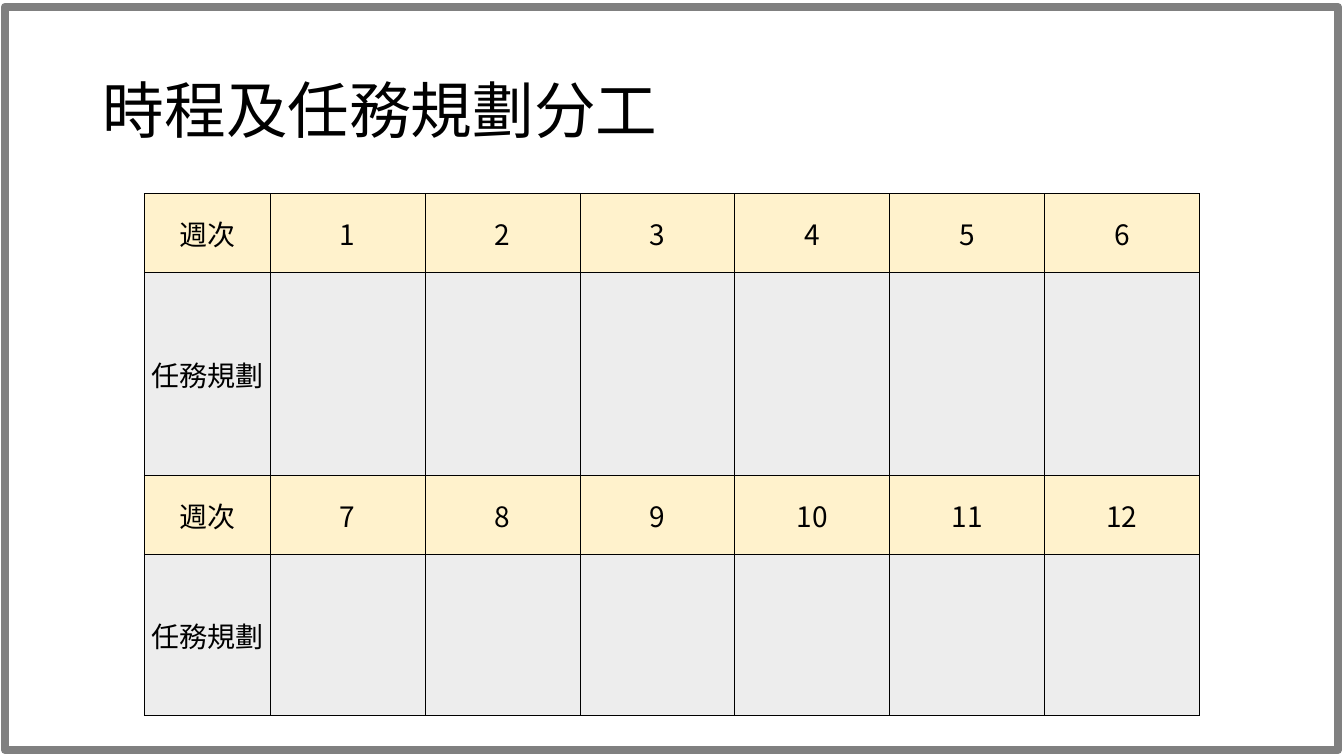
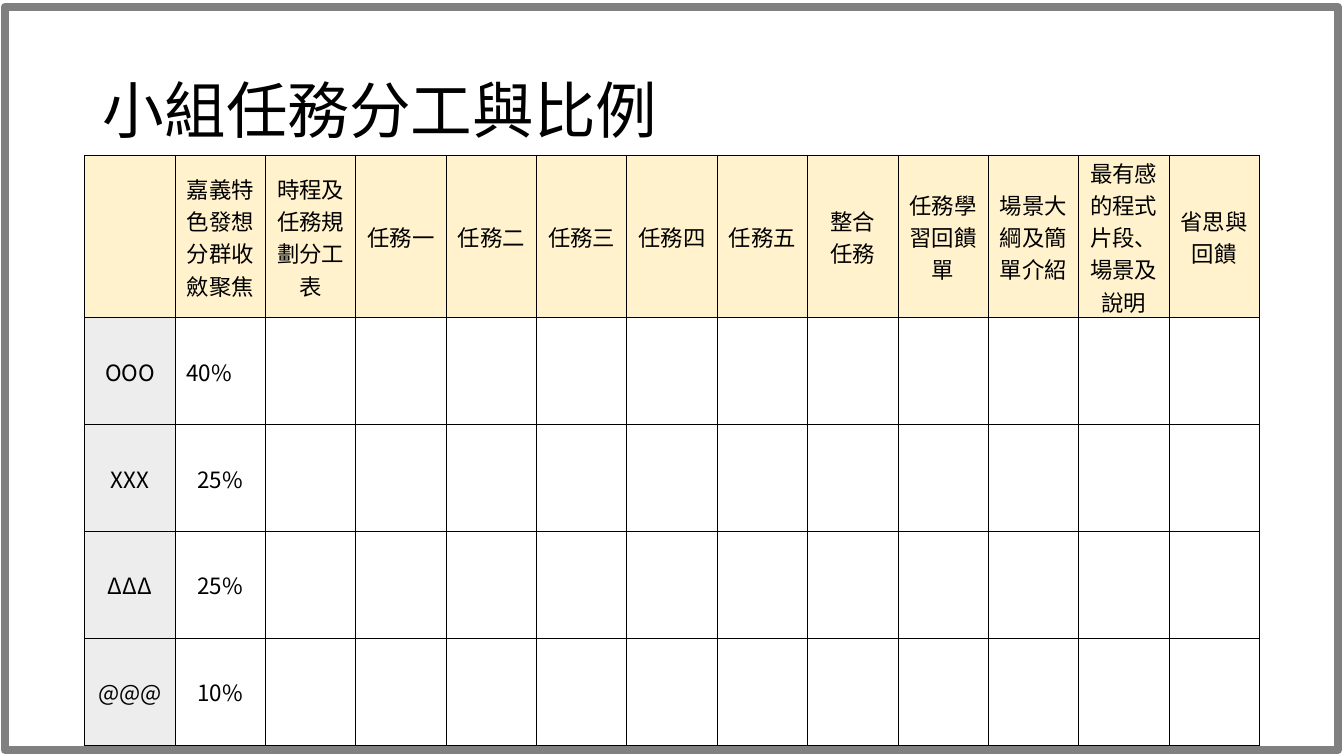
from lxml.etree import SubElement
from pptx import Presentation
from pptx.dml.color import RGBColor
from pptx.enum.shapes import MSO_SHAPE as Shape
from pptx.enum.text import MSO_ANCHOR as Anchor, MSO_AUTO_SIZE as AutoSize, PP_ALIGN as Align
from pptx.oxml.ns import qn
from pptx.util import Inches, Pt

FONT = "Noto Sans CJK SC"
BLACK, WHITE, FRAME_GRAY = "000000", "FFFFFF", "808080"
HEADER_FILL, LABEL_FILL = "FFF2CC", "EDEDED"
BORDER_WIDTH = Pt(0.5)
TITLE_BOX = (0.92, 0.4, 11.5, 1.45)
FRAME_BOX = (0.05, 0.07, 13.22, 7.37)


def color(value):
    return RGBColor.from_string(value)


def inches(box):
    return [Inches(length) for length in box]


def add_run(paragraph, text, size):
    run = paragraph.add_run()
    run.text = text
    run.font.name = FONT
    run.font.size = Pt(size)
    run.font.color.rgb = color(BLACK)
    # East Asian characters take their own typeface setting
    SubElement(run.font._element, qn("a:ea"), typeface=FONT)


def add_title(slide, text):
    title = slide.shapes.title
    title.left, title.top, title.width, title.height = inches(TITLE_BOX)
    frame = title.text_frame
    frame.word_wrap = True
    frame.auto_size = AutoSize.NONE
    frame.vertical_anchor = Anchor.MIDDLE
    paragraph = frame.paragraphs[0]
    paragraph.alignment = Align.LEFT
    paragraph.line_spacing = 0.9
    add_run(paragraph, text, 44)


def add_frame(slide):
    border = slide.shapes.add_shape(Shape.RECTANGLE, *inches(FRAME_BOX))
    border.shadow.inherit = False
    border.fill.background()
    border.line.color.rgb = color(FRAME_GRAY)
    border.line.width = Pt(6)


def set_borders(cell):
    properties = cell._tc.get_or_add_tcPr()
    for side in ("a:lnL", "a:lnR", "a:lnT", "a:lnB"):
        line = SubElement(properties, qn(side), w=str(BORDER_WIDTH))
        fill = SubElement(line, qn("a:solidFill"))
        SubElement(fill, qn("a:srgbClr"), val=BLACK)


def format_cell(cell, text, size, fill):
    set_borders(cell)
    cell.fill.solid()
    cell.fill.fore_color.rgb = color(fill)
    cell.vertical_anchor = Anchor.MIDDLE
    cell.margin_left = cell.margin_right = cell.margin_top = Inches(0.01)
    cell.margin_bottom = 0
    for index, line in enumerate(text.split("\n")):
        frame = cell.text_frame
        paragraph = frame.add_paragraph() if index else frame.paragraphs[0]
        paragraph.alignment = Align.CENTER
        if line:
            add_run(paragraph, line, size)


def add_table(slide, left, top, widths, heights, rows, size, fill_for):
    """Fill a grid from rows of text; short rows end in empty cells."""
    box = inches((left, top, sum(widths), sum(heights)))
    table = slide.shapes.add_table(len(heights), len(widths), *box).table
    table.first_row = table.horz_banding = False
    for column, width in zip(table.columns, widths):
        column.width = Inches(width)
    for r, (height, texts) in enumerate(zip(heights, rows)):
        table.rows[r].height = Inches(height)
        for c in range(len(widths)):
            text = texts[c] if c < len(texts) else ""
            format_cell(table.cell(r, c), text, size, fill_for(r, c))


def start_slide(presentation, title):
    slide = presentation.slides.add_slide(presentation.slide_layouts[5])
    add_title(slide, title)
    return slide


def schedule_slide(presentation):
    slide = start_slide(presentation, "時程及任務規劃分工")
    rows = []
    for first_week in (1, 7):
        weeks = [str(week) for week in range(first_week, first_week + 6)]
        rows += [["週次"] + weeks, ["任務規劃"]]
    add_table(slide, 1.43, 1.92, [1.25] + [1.536] * 6, [0.78, 2.02, 0.78, 1.6],
              rows, 20, lambda r, c: LABEL_FILL if r % 2 else HEADER_FILL)
    add_frame(slide)


def share_fill(row, column):
    if row == 0:
        return HEADER_FILL
    return WHITE if column else LABEL_FILL


def share_slide(presentation):
    slide = start_slide(presentation, "小組任務分工與比例")
    tasks = ["任務" + number for number in "一二三四五"]
    header = ["", "嘉義特色發想分群收斂聚焦", "時程及任務規劃分工表", *tasks,
              "整合\n任務", "任務學習回饋單", "場景大綱及簡單介紹",
              "最有感的程式片段、場景及說明", "省思與回饋"]
    members = [["OOO", "40%　"], ["XXX", "25%"], ["ΔΔΔ", "25%"], ["@@@", "10%"]]
    add_table(slide, 0.84, 1.54, [11.65 / len(header)] * len(header),
              [1.45] + [1.06] * len(members), [header] + members, 16, share_fill)
    add_frame(slide)


def main():
    presentation = Presentation()
    presentation.slide_width = Inches(13.33)
    presentation.slide_height = Inches(7.5)
    schedule_slide(presentation)
    share_slide(presentation)
    presentation.save("out.pptx")


if __name__ == "__main__":
    main()
